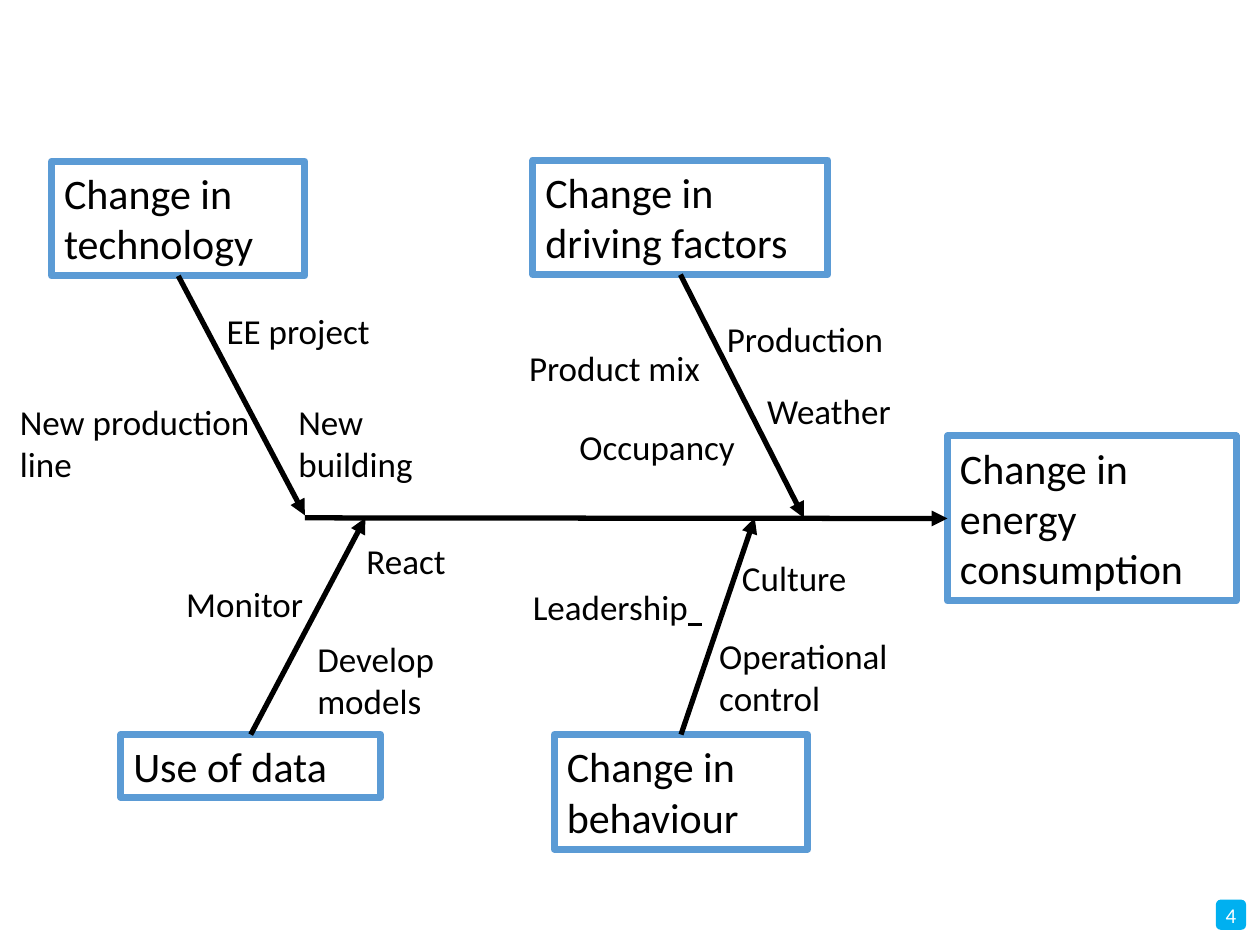
import pptx
import pptx.util
import pptx.dml.color
import pptx.enum.shapes
import pptx.enum.text
import pptx.oxml
import pptx.oxml.ns
from pptx.util import Inches

FONT = "Calibri"
BLACK, WHITE, BLUE, CYAN = "000000", "FFFFFF", "5B9BD5", "00B0F0"
TOP, LEFT, BOTTOM = 0, 1, 2  # connection sites of a rectangle

# Content: the effect, then each cause with its box, joining side, and arrow tip
EFFECT = (["Change in energy", "consumption"], (7.52, 3.46, 2.29, 1.31))
SPINE_START = (2.42, 4.11)
CAUSES = [
    ("Change in behaviour", (4.4, 5.83, 2.01, 0.91), TOP, (5.99, 4.11)),
    ("Use of data", (0.96, 5.83, 2.06, 0.5), TOP, (2.9, 4.11)),
    ("Change in driving factors", (4.23, 1.27, 2.34, 0.91), BOTTOM, (6.38, 4.11)),
    ("Change in technology", (0.41, 1.28, 2.01, 0.91), BOTTOM, (2.42, 4.09)),
]
# Details: text, left, top, width, number of lines
DETAILS = [
    ("EE project", 1.7, 2.41, 1.91, 1),
    ("New production line", 0.06, 3.13, 2.06, 2),
    ("Leadership", 4.13, 4.6, 1.58, 1),
    ("Operational control", 5.61, 4.99, 1.65, 2),
    ("Culture", 5.79, 4.37, 1.34, 1),
    ("Occupancy", 4.5, 3.33, 1.69, 1),
    ("Product mix", 4.1, 2.7, 1.75, 1),
    ("Weather", 5.99, 3.04, 1.6, 1),
    ("Production", 5.67, 2.47, 1.65, 1),
    ("New building", 2.27, 3.13, 1.34, 2),
    ("Monitor", 1.38, 4.57, 1.34, 1),
    ("Develop models", 2.42, 5.01, 1.34, 2),
    ("React", 2.81, 4.23, 1.34, 1),
]
LINE_HEIGHTS = {1: 0.44, 2: 0.77}
PAGE_NUMBER = ("4", (9.65, 7.14, 0.24, 0.24))


def color(hex_value):
    return pptx.dml.color.RGBColor.from_string(hex_value)


def format_font(font, size, hex_value, **values):
    values = {"name": FONT, "size": pptx.util.Pt(size), **values}
    for name, value in values.items():
        setattr(font, name, value)
    font.color.rgb = color(hex_value)


def write(shape, lines, size, hex_value=BLACK, align="LEFT", **frame_values):
    frame = shape.text_frame
    frame_values = {
        "word_wrap": True,
        "vertical_anchor": pptx.enum.text.MSO_ANCHOR.TOP,
        **frame_values,
    }
    for name, value in frame_values.items():
        setattr(frame, name, value)
    frame.text = "\n".join(lines)
    for paragraph in frame.paragraphs:
        paragraph.alignment = getattr(pptx.enum.text.PP_ALIGN, align)
        for run in paragraph.runs:
            format_font(run.font, size, hex_value)


def add_box(slide, lines, place):
    box = slide.shapes.add_shape(
        pptx.enum.shapes.MSO_SHAPE.RECTANGLE, *map(Inches, place))
    box.shadow.inherit = False
    box.fill.background()
    box.line.color.rgb = color(BLUE)
    box.line.width = pptx.util.Pt(4)
    write(box, lines, 24)
    return box


def add_arrow(slide, start, end):
    arrow = slide.shapes.add_connector(
        pptx.enum.shapes.MSO_CONNECTOR.STRAIGHT, *map(Inches, start + end))
    arrow.line.color.rgb = color(BLACK)
    arrow.line.width = pptx.util.Pt(3)
    head = pptx.oxml.parse_xml(
        f'<a:tailEnd {pptx.oxml.ns.nsdecls("a")} type="triangle"/>')
    arrow.line._get_or_add_ln().append(head)
    arrow._element.spPr.append(
        pptx.oxml.parse_xml(f'<a:effectLst {pptx.oxml.ns.nsdecls("a")}/>'))
    return arrow


def main():
    presentation = pptx.Presentation()
    presentation.slide_width = Inches(10)
    presentation.slide_height = Inches(7.5)
    slide = presentation.slides.add_slide(presentation.slide_layouts[6])

    # Page number badge
    number, place = PAGE_NUMBER
    badge = slide.shapes.add_shape(
        pptx.enum.shapes.MSO_SHAPE.ROUNDED_RECTANGLE, *map(Inches, place))
    badge.shadow.inherit = False
    badge.fill.solid()
    badge.fill.fore_color.rgb = color(CYAN)
    badge.line.fill.background()
    write(badge, [number], 12, WHITE, "CENTER",
          vertical_anchor=pptx.enum.text.MSO_ANCHOR.MIDDLE,
          margin_left=0, margin_top=0, margin_right=0, margin_bottom=0)

    # Effect and spine
    effect = add_box(slide, *EFFECT)
    spine = add_arrow(slide, SPINE_START, SPINE_START)
    spine.end_connect(effect, LEFT)

    # Causes and their bones
    for text, place, side, tip in CAUSES:
        cause = add_box(slide, [text], place)
        bone = add_arrow(slide, tip, tip)
        bone.begin_connect(cause, side)

    # Details beside the bones
    for text, left, top, width, line_count in DETAILS:
        place = (left, top, width, LINE_HEIGHTS[line_count])
        label = slide.shapes.add_textbox(*map(Inches, place))
        write(label, [text], 20)
        if text == "Leadership":  # short underlined blank after the word
            blank = label.text_frame.paragraphs[0].add_run()
            blank.text = "  "
            format_font(blank.font, 18, BLACK, underline=True)

    presentation.save("out.pptx")


if __name__ == "__main__":
    main()
